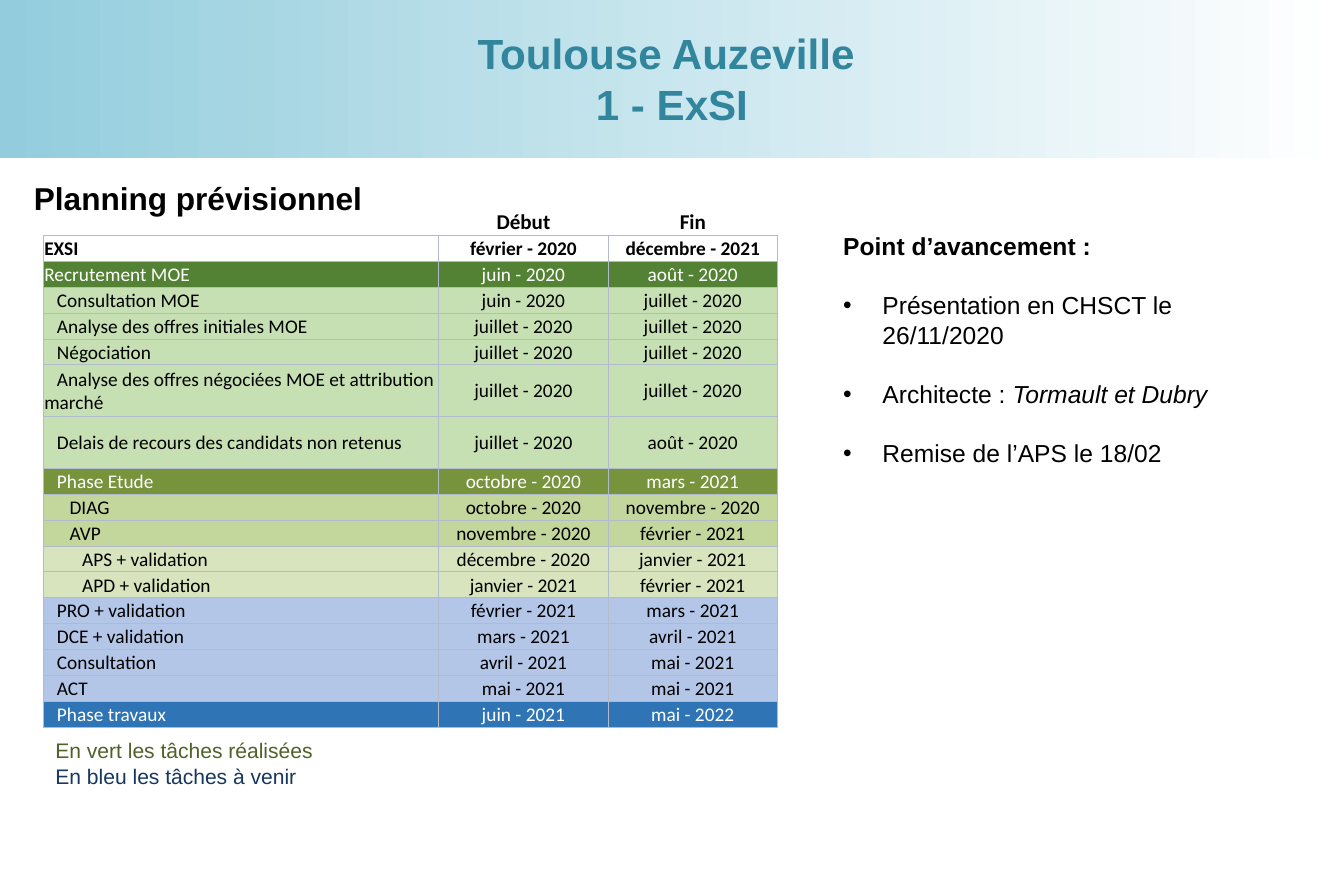
from dataclasses import dataclass

from lxml import etree
from pptx import Presentation
from pptx.dml.color import RGBColor
from pptx.enum.shapes import MSO_SHAPE
from pptx.enum.text import MSO_ANCHOR, MSO_AUTO_SIZE, PP_ALIGN
from pptx.oxml.ns import qn
from pptx.util import Inches, Pt

RECTANGLE = MSO_SHAPE.RECTANGLE
LEFT, CENTER = PP_ALIGN.LEFT, PP_ALIGN.CENTER
TOP, MIDDLE, BOTTOM = MSO_ANCHOR.TOP, MSO_ANCHOR.MIDDLE, MSO_ANCHOR.BOTTOM
NO_RESIZE = MSO_AUTO_SIZE.NONE
TITLE_AND_CONTENT = 1


@dataclass(frozen=True)
class Theme:
    text_font: str = "Arial"
    table_font: str = "Calibri"
    title_size: int = 24
    heading_size: int = 18
    body_size: int = 14
    small_size: int = 12
    table_size: int = 11
    leading: float = 1.2
    black: str = "000000"
    white: str = "FFFFFF"
    title: str = "31859C"
    band: str = "93CDDD"
    border: str = "B1BBCC"
    done: str = "4F6228"
    coming: str = "17375E"
    recruitment: str = "548235"
    recruitment_step: str = "C6E0B4"
    study: str = "77933C"
    study_step: str = "C3D69B"
    study_detail: str = "D7E4BD"
    next_step: str = "B4C6E7"
    works: str = "2F75B5"


THEME = Theme()
DARK_FILLS = (THEME.recruitment, THEME.study, THEME.works)

# Label, indent level, start, end, fill
PLANNING = [
    ("EXSI", 0, "février - 2020", "décembre - 2021", THEME.white),
    ("Recrutement MOE", 0, "juin - 2020", "août - 2020", THEME.recruitment),
    ("Consultation MOE", 1, "juin - 2020", "juillet - 2020", THEME.recruitment_step),
    ("Analyse des offres initiales MOE", 1, "juillet - 2020", "juillet - 2020", THEME.recruitment_step),
    ("Négociation", 1, "juillet - 2020", "juillet - 2020", THEME.recruitment_step),
    ("Analyse des offres négociées MOE et attribution marché", 1,
     "juillet - 2020", "juillet - 2020", THEME.recruitment_step),
    ("Delais de recours des candidats non retenus", 1,
     "juillet - 2020", "août - 2020", THEME.recruitment_step),
    ("Phase Etude", 1, "octobre - 2020", "mars - 2021", THEME.study),
    ("DIAG", 2, "octobre - 2020", "novembre - 2020", THEME.study_step),
    ("AVP", 2, "novembre - 2020", "février - 2021", THEME.study_step),
    ("APS + validation", 3, "décembre - 2020", "janvier - 2021", THEME.study_detail),
    ("APD + validation", 3, "janvier - 2021", "février - 2021", THEME.study_detail),
    ("PRO + validation", 1, "février - 2021", "mars - 2021", THEME.next_step),
    ("DCE + validation", 1, "mars - 2021", "avril - 2021", THEME.next_step),
    ("Consultation", 1, "avril - 2021", "mai - 2021", THEME.next_step),
    ("ACT", 1, "mai - 2021", "mai - 2021", THEME.next_step),
    ("Phase travaux", 1, "juin - 2021", "mai - 2022", THEME.works),
]
TALL_ROWS = (6, 7)


class Page:
    """Places elements on one slide, in percent of its width and height."""

    def __init__(self, deck, theme):
        self.deck, self.theme = deck, theme
        self.slide = deck.slides.add_slide(deck.slide_layouts[TITLE_AND_CONTENT])

    def across(self, share):
        return round(self.deck.slide_width * share / 100)

    def down(self, share):
        return round(self.deck.slide_height * share / 100)

    def area(self, left, top, width, height):
        return self.across(left), self.down(top), self.across(width), self.down(height)

    def style(self, para, size, color, bold=False, align=LEFT, font=None):
        para.alignment = align
        para.font.name = font or self.theme.text_font
        para.font.size = Pt(size)
        para.font.bold = bold
        para.font.color.rgb = RGBColor.from_string(color)

    def band(self, *area):
        box = self.slide.shapes.add_shape(RECTANGLE, *self.area(*area))
        box.shadow.inherit = False
        box.line.fill.background()
        box.fill.gradient()
        box.fill.gradient_angle = 0
        for stop, color in zip(box.fill.gradient_stops, (self.theme.band, self.theme.white)):
            stop.color.rgb = RGBColor.from_string(color)
        self.slide.shapes._spTree.insert(2, box._element)

    def fill_box(self, box, area, lines, size, bold=False, align=LEFT, bullets=False):
        """Fill a box with (text, colour) lines; bullets start at the second line."""
        box.left, box.top, box.width, box.height = self.area(*area)
        frame = box.text_frame
        frame.word_wrap, frame.auto_size = True, NO_RESIZE
        frame.vertical_anchor = TOP
        for index, (text, color) in enumerate(lines):
            para = frame.paragraphs[0] if index == 0 else frame.add_paragraph()
            bulleted = bullets and index > 0
            if bullets:
                self.bullet(para, bulleted)
            leading = Pt(size * self.theme.leading)
            para.line_spacing = leading
            para.space_before = leading if bulleted else Pt(0)
            self.style(para, size, color, bold or (bullets and not bulleted), align)
            for position, part in enumerate(text.split("|")):
                span = para.add_run()
                span.text = part
                if position:
                    span.font.italic = True

    def bullet(self, para, shown):
        properties = para._p.get_or_add_pPr()
        indent = Inches(0.31) if shown else 0
        properties.set("marL", str(indent))
        properties.set("indent", str(-indent))
        if shown:
            etree.SubElement(properties, qn("a:buFont")).set("typeface", self.theme.text_font)
            etree.SubElement(properties, qn("a:buChar")).set("char", "•")
        else:
            etree.SubElement(properties, qn("a:buNone"))

    def text(self, area, lines, size, bold=False):
        box = self.slide.shapes.add_textbox(*self.area(*area))
        self.fill_box(box, area, lines, size, bold)

    def planning(self, left, top, widths, row_height, header, rows):
        heights = [row_height * (2 if i in TALL_ROWS else 1) for i in range(len(rows) + 1)]
        area = self.area(left, top, sum(widths), sum(heights))
        table = self.slide.shapes.add_table(len(heights), len(widths), *area).table
        table.first_row = table.horz_banding = False
        for column, width in zip(table.columns, widths):
            column.width = self.across(width)
        for row, height in zip(table.rows, heights):
            row.height = self.down(height)
        for column, label in enumerate(header):
            self.cell(table.cell(0, column), label, self.theme.small_size, CENTER, bold=True)
        for index, (label, level, start, end, fill) in enumerate(rows, 1):
            for column, value in enumerate((label, start, end)):
                self.cell(table.cell(index, column), value, self.theme.table_size,
                          CENTER if column else LEFT, bold=index == 1, fill=fill,
                          level=0 if column else level)

    def cell(self, cell, text, size, align, bold, fill=None, level=0):
        cell.margin_left = cell.margin_right = cell.margin_top = Inches(0.01)
        cell.margin_bottom = 0
        cell.vertical_anchor = MIDDLE if fill else BOTTOM
        if fill:
            cell.fill.solid()
            cell.fill.fore_color.rgb = RGBColor.from_string(fill)
        else:
            cell.fill.background()
        cell.text = text
        para = cell.text_frame.paragraphs[0]
        para._p.get_or_add_pPr().set("indent", str(Inches(0.1) * level))
        color = self.theme.white if fill in DARK_FILLS else self.theme.black
        self.style(para, size, color, bold, align, self.theme.table_font)
        self.borders(cell, "LRTB" if fill else "B")

    def borders(self, cell, visible):
        properties = cell._tc.get_or_add_tcPr()
        for position, side in enumerate("LRTB"):
            line = etree.Element(qn(f"a:ln{side}"), w=str(Pt(0.5)))
            if side in visible:
                paint = etree.SubElement(line, qn("a:solidFill"))
                etree.SubElement(paint, qn("a:srgbClr")).set("val", self.theme.border)
            else:
                etree.SubElement(line, qn("a:noFill"))
            properties.insert(position, line)


def main():
    deck = Presentation()
    deck.slide_width, deck.slide_height = Inches(10.63), Inches(7.09)
    page = Page(deck, THEME)
    title, body = page.slide.placeholders
    page.band(0, 0, 100, 17.63)
    page.fill_box(title, (10.9, 2.4, 78.2, 12.8),
                  [("Toulouse Auzeville ", THEME.title), ("1 - ExSI", THEME.title)],
                  THEME.title_size, bold=True, align=CENTER)
    page.text((1.6, 19.3, 31.2, 5.6), [("Planning prévisionnel", THEME.black)],
              THEME.heading_size, bold=True)
    page.planning(3.2, 23.27, (29.45, 12.6, 12.6), 2.89, ("", "Début", "Fin"), PLANNING)
    page.text((3.2, 81.66, 36.4, 7),
              [("En vert les tâches réalisées", THEME.done),
               ("En bleu les tâches à venir", THEME.coming)], THEME.small_size)
    progress = ("Point d’avancement :", "Présentation en CHSCT le 26/11/2020",
                "Architecte : |Tormault et Dubry", "Remise de l’APS le 18/02")
    page.fill_box(body, (61.8, 25.1, 32.3, 31.3), [(line, THEME.black) for line in progress],
                  THEME.body_size, bullets=True)
    deck.save("out.pptx")


if __name__ == "__main__":
    main()
